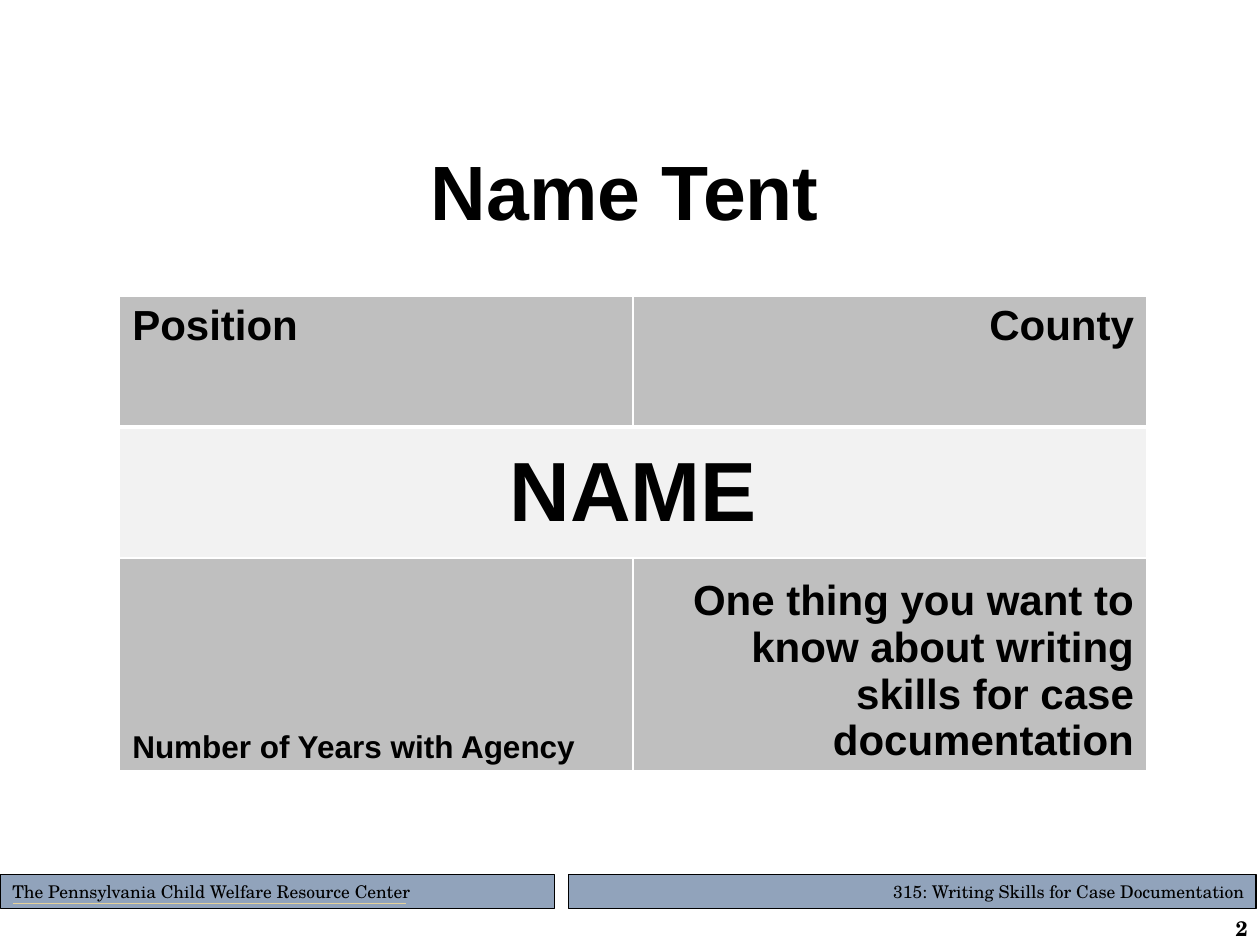
from lxml.etree import SubElement
from pptx import Presentation
from pptx.dml.color import RGBColor
from pptx.enum.shapes import MSO_CONNECTOR, MSO_SHAPE
from pptx.enum.text import MSO_ANCHOR, MSO_AUTO_SIZE, PP_ALIGN
from pptx.oxml.ns import qn
from pptx.util import Inches, Pt

THEME = {
    "sans": "Arial", "serif": "TeX Gyre Schola",
    "ink": "000000", "bar": "91A3BB", "rule": "E5D199",
    "dark": "BFBFBF", "light": "F2F2F2", "grid": "FFFFFF",
    "title": 44, "name": 48, "label": 24, "small": 18, "foot": 10, "page": 12,
}
LEFT, MID, RIGHT = PP_ALIGN.LEFT, PP_ALIGN.CENTER, PP_ALIGN.RIGHT

TITLE = "Name Tent"
PAGE = "2"
# Each row: height, fill, anchor, cells of (text, size, alignment)
ROWS = [
    (1.04, "dark", MSO_ANCHOR.TOP,
     [("Position", "label", LEFT), ("County", "label", RIGHT)]),
    (1.04, "light", MSO_ANCHOR.MIDDLE, [("NAME", "name", MID)]),
    (1.69, "dark", MSO_ANCHOR.BOTTOM,
     [("Number of Years with Agency", "small", LEFT),
      ("One thing you want to know about writing skills for case documentation",
       "label", RIGHT)]),
]
# Each bar: left, width, line width, alignment, text
BARS = [
    (4.51, 5.46, 0.75, RIGHT, "315: Writing Skills for Case Documentation"),
    (0, 4.4, 0.5, LEFT, "The Pennsylvania Child Welfare Resource Center"),
]


def color(key):
    return RGBColor.from_string(THEME[key])


def box(*lengths):
    return [Inches(n) for n in lengths]


def write(frame, text, size, align, face="sans", bold=True):
    frame.word_wrap = True
    frame.text = text
    para = frame.paragraphs[0]
    para.alignment = align
    font = para.font
    font.name, font.size, font.bold = THEME[face], Pt(THEME[size]), bold
    font.color.rgb = color("ink")


def edge(cell, **widths):
    """Draw cell borders; call before filling, as borders come first in the XML."""
    props = cell._tc.get_or_add_tcPr()
    for side in "LRTB":
        line = SubElement(props, qn(f"a:ln{side}"), w=str(Pt(widths.get(side, 1))))
        paint = SubElement(line, qn("a:solidFill"))
        SubElement(paint, qn("a:srgbClr"), val=THEME["grid"])


def add_bars(slide):
    for left, width, weight, align, text in BARS:
        bar = slide.shapes.add_shape(MSO_SHAPE.RECTANGLE, *box(left, 6.94, width, 0.27))
        bar.shadow.inherit = False
        bar.fill.solid()
        bar.fill.fore_color.rgb = color("bar")
        bar.line.color.rgb = color("ink")
        bar.line.width = Pt(weight)
        write(bar.text_frame, text, "foot", align, "serif", False)
    rule = slide.shapes.add_connector(MSO_CONNECTOR.STRAIGHT, *box(0.1, 7.17, 3.22, 7.17))
    rule.line.color.rgb = color("rule")
    rule.line.width = Pt(0.75)
    SubElement(rule._element.spPr, qn("a:effectLst"))


def add_tent(slide):
    high = sum(row[0] for row in ROWS)
    table = slide.shapes.add_table(len(ROWS), 2, *box(0.95, 2.35, 8.15, high)).table
    table.first_row = table.horz_banding = False
    for r, (height, fill, anchor, items) in enumerate(ROWS):
        table.rows[r].height = Inches(height)
        if len(items) == 1:
            table.cell(r, 0).merge(table.cell(r, 1))
        for c in range(2):
            cell = table.cell(r, c)
            edge(cell, T=3 if r == 1 else 1, B=3 if r == 0 else 1)
            cell.fill.solid()
            cell.fill.fore_color.rgb = color(fill)
            cell.vertical_anchor = anchor
        for c, item in enumerate(items):
            write(table.cell(r, c).text_frame, *item)


def main():
    deck = Presentation()
    deck.slide_width, deck.slide_height = box(10, 7.5)
    slide = deck.slides.add_slide(deck.slide_layouts[5])
    add_bars(slide)
    title = slide.shapes.title
    title.left, title.top, title.width, title.height = box(0.46, 0.92, 9, 1)
    write(title.text_frame, TITLE, "title", MID)
    title.text_frame.vertical_anchor = MSO_ANCHOR.BOTTOM
    title.text_frame.auto_size = MSO_AUTO_SIZE.NONE
    add_tent(slide)
    page = slide.shapes.add_textbox(*box(8.89, 7.22, 1.11, 0.26))
    write(page.text_frame, PAGE, "page", RIGHT, "serif")
    deck.save("out.pptx")


if __name__ == "__main__":
    main()
